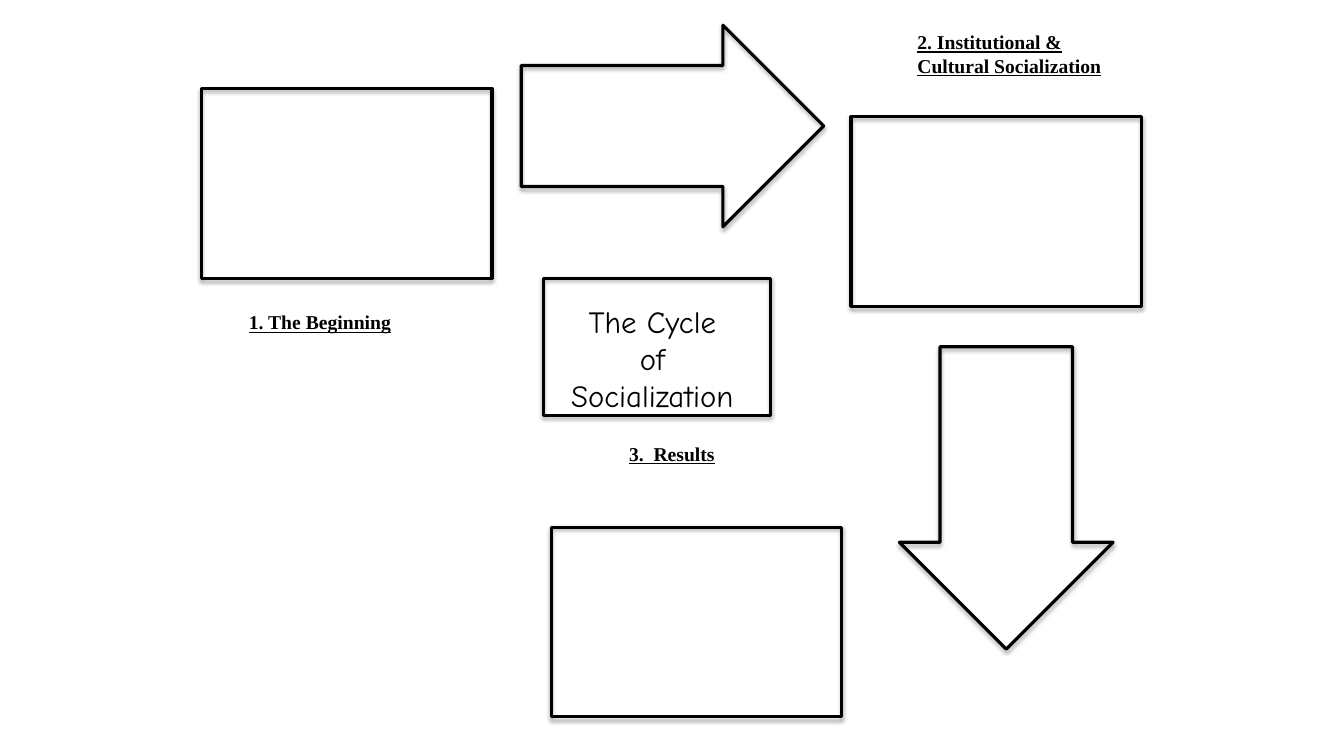
from lxml.etree import SubElement
from pptx import Presentation
from pptx.dml.color import RGBColor
from pptx.enum.shapes import MSO_SHAPE
from pptx.enum.text import MSO_ANCHOR, PP_ALIGN
from pptx.oxml.ns import qn
from pptx.util import Inches, Pt

THEME = {
    "ink": RGBColor(0, 0, 0),
    "title_font": "Comic Neue", "title_size": 22,
    "label_font": "Times New Roman", "label_size": 14,
    "line": 2.25, "blur": 3.1, "drop": 1.8, "shade": 35,
}

TITLE = ["The Cycle", "of Socialization"]
TITLE_AT = (5.47, 2.95, 2, 0.88)
FRAME_AT = (5.39, 2.76, 2.25, 1.36)
STAGE_SIZE = (2.88, 1.88)
STAGES = [
    ("1. The Beginning", (2.37, 3.03, 2.12, 0.5), (2, 0.88)),
    ("2. Institutional & Cultural Socialization", (9, 0.25, 2.12, 0.75), (8.44, 1.16)),
    ("3.  Results", (6.14, 4.33, 1.25, 0.38), (5.47, 5.23)),
]
ARROWS = [
    ((5.17, 0.25, 3, 2), 0, (0.6, 0.5)),
    ((8.48, 3.88, 3, 2.12), 90, (0.62, 0.5)),
]


def add_shadow(shape):
    shape.shadow.inherit = False
    effects = shape._element.spPr.find(qn("a:effectLst"))
    shadow = SubElement(effects, qn("a:outerShdw"), blurRad=str(Pt(THEME["blur"])),
                        dist=str(Pt(THEME["drop"])), dir="5400000", rotWithShape="0")
    color = SubElement(shadow, qn("a:srgbClr"), val=str(THEME["ink"]))
    SubElement(color, qn("a:alpha"), val=str(THEME["shade"] * 1000))


def add_outline(slide, kind, at, turn=0, adjust=()):
    shape = slide.shapes.add_shape(kind, *map(Inches, at))
    shape.rotation = turn
    for index, value in enumerate(adjust):
        shape.adjustments[index] = value
    shape.fill.background()
    shape.line.color.rgb = THEME["ink"]
    shape.line.width = Pt(THEME["line"])
    add_shadow(shape)


def add_text(slide, lines, at, role="label", align=PP_ALIGN.LEFT, bold=False, underline=False):
    frame = slide.shapes.add_textbox(*map(Inches, at)).text_frame
    frame.word_wrap = True
    frame.vertical_anchor = MSO_ANCHOR.TOP
    frame.text = "\n".join(lines)
    for para in frame.paragraphs:
        para.alignment = align
        for run in para.runs:
            font = run.font
            font.name = THEME[role + "_font"]
            font.size = Pt(THEME[role + "_size"])
            font.color.rgb = THEME["ink"]
            font.bold = bold
            font.underline = underline


def main():
    deck = Presentation()
    deck.slide_width, deck.slide_height = Inches(13.33), Inches(7.5)
    slide = deck.slides.add_slide(deck.slide_layouts[6])

    add_outline(slide, MSO_SHAPE.RECTANGLE, FRAME_AT)
    add_text(slide, TITLE, TITLE_AT, role="title", align=PP_ALIGN.CENTER)
    for label, label_at, corner in STAGES:
        add_text(slide, [label], label_at, bold=True, underline=True)
        add_outline(slide, MSO_SHAPE.RECTANGLE, corner + STAGE_SIZE)
    for at, turn, adjust in ARROWS:
        add_outline(slide, MSO_SHAPE.RIGHT_ARROW, at, turn, adjust)

    deck.save("out.pptx")


if __name__ == "__main__":
    main()
